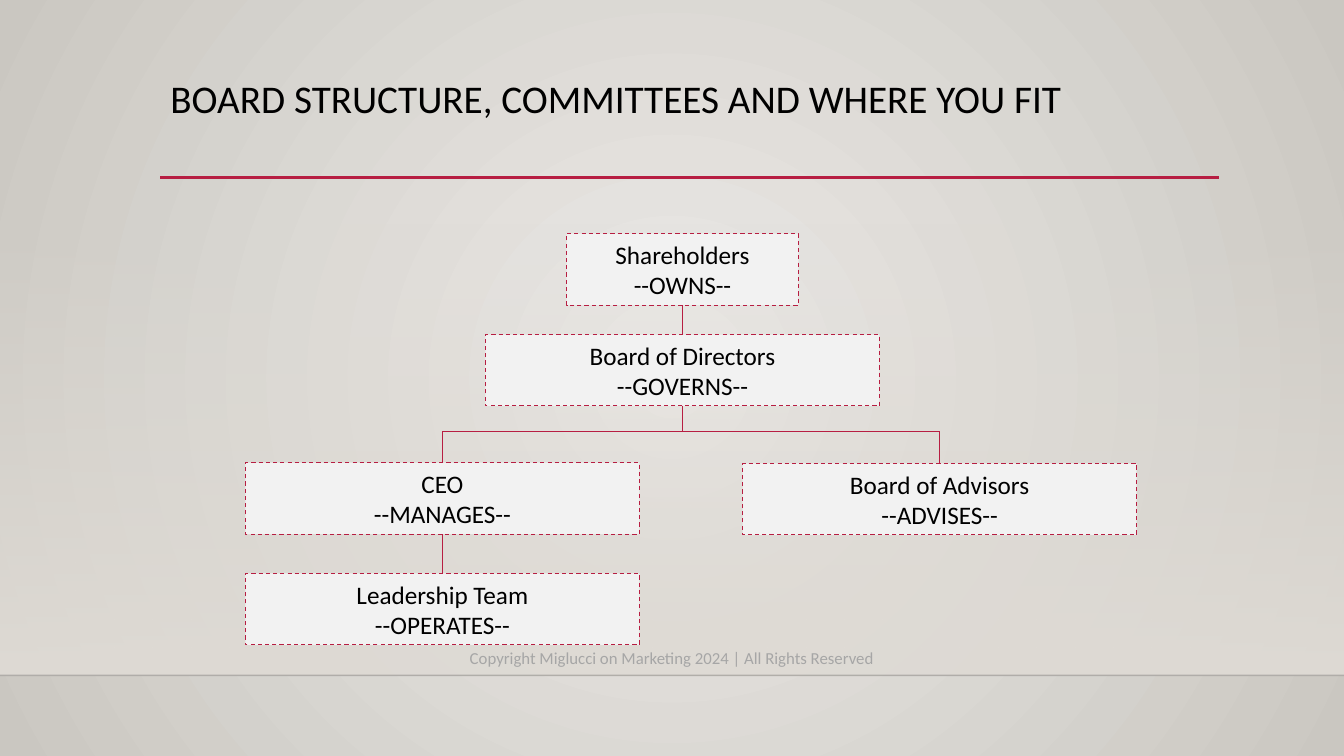
from dataclasses import dataclass

from pptx import Presentation
from pptx.dml.color import RGBColor
from pptx.enum.dml import MSO_LINE
from pptx.enum.shapes import MSO_CONNECTOR, MSO_SHAPE
from pptx.enum.text import MSO_ANCHOR, MSO_AUTO_SIZE, PP_ALIGN
from pptx.oxml import parse_xml
from pptx.oxml.ns import nsdecls, qn
from pptx.util import Cm, Pt

FONT = "Calibri"
CRIMSON = "B71E42"
SLIDE_W, SLIDE_H = 33.87, 19.05
BOX_H = 1.8
BUS_Y = 10.87
TOP, BOTTOM = 0, 2


@dataclass
class Role:
    name: str
    duty: str
    center: float
    top: float
    width: float = 9.93


SHAREHOLDERS = Role("Shareholders", "OWNS", 17.2, 5.89, 5.84)
DIRECTORS = Role("Board of Directors", "GOVERNS", 17.2, 8.43)
CEO = Role("CEO", "MANAGES", 11.15, 11.66)
ADVISORS = Role("Board of Advisors", "ADVISES", 23.68, 11.68)
LEADERSHIP = Role("Leadership Team", "OPERATES", 11.15, 14.45)


def rgb(value: str) -> RGBColor:
    return RGBColor.from_string(value)


def set_alpha(color_parent, percent: int) -> None:
    """Give the colour inside an element an opacity."""
    color = color_parent.find(f".//{qn('a:srgbClr')}")
    color.append(parse_xml(f'<a:alpha {nsdecls("a")} val="{percent * 1000}"/>'))


def set_gradient(fill, start: str, end: str) -> None:
    fill.gradient()
    for stop, color, position in zip(fill.gradient_stops, (start, end), (0, 1)):
        stop.color.rgb = rgb(color)
        stop.position = position


def format_text(tf, size: int, color: str, align: PP_ALIGN) -> None:
    for p in tf.paragraphs:
        p.alignment = align
        for r in p.runs:
            r.font.name = FONT
            r.font.size = Pt(size)
            r.font.color.rgb = rgb(color)


def add_line(slide, x1: float, y1: float, x2: float, y2: float,
             color: str = CRIMSON, width: float = 0.75):
    line = slide.shapes.add_connector(
        MSO_CONNECTOR.STRAIGHT, Cm(x1), Cm(y1), Cm(x2), Cm(y2))
    line.line.color.rgb = rgb(color)
    line.line.width = Pt(width)
    line._element.spPr.append(parse_xml(f'<a:effectLst {nsdecls("a")}/>'))
    return line


def add_role(slide, role: Role):
    sp = slide.shapes.add_shape(
        MSO_SHAPE.RECTANGLE, Cm(role.center - role.width / 2), Cm(role.top),
        Cm(role.width), Cm(BOX_H))
    sp.shadow.inherit = False
    sp.fill.solid()
    sp.fill.fore_color.rgb = rgb("F2F2F2")
    sp.line.color.rgb = rgb(CRIMSON)
    sp.line.width = Pt(0.75)
    sp.line.dash_style = MSO_LINE.DASH
    tf = sp.text_frame
    tf.word_wrap = True
    tf.auto_size = MSO_AUTO_SIZE.SHAPE_TO_FIT_TEXT
    tf.text = f"{role.name}\n--{role.duty}--"
    format_text(tf, 18, "000000", PP_ALIGN.CENTER)
    return sp


def link(slide, upper: Role, lower: Role, boxes: dict) -> None:
    line = add_line(slide, upper.center, upper.top + BOX_H,
                    lower.center, lower.top)
    line.begin_connect(boxes[upper.name], BOTTOM)
    line.end_connect(boxes[lower.name], TOP)


def add_backdrop(slide) -> None:
    # Radial background
    fill = slide.background.fill
    set_gradient(fill, "ECEAE7", "CAC7C1")
    lin = slide._element.find(f".//{qn('a:lin')}")
    lin.getparent().replace(lin, parse_xml(
        f'<a:path {nsdecls("a")} path="circle">'
        '<a:fillToRect l="50000" t="50000" r="50000" b="50000"/></a:path>'))

    # Band that fades in downwards, and the floor line below it
    band = slide.shapes.add_shape(
        MSO_SHAPE.RECTANGLE, 0, Cm(5.61), Cm(SLIDE_W), Cm(11.41))
    band.shadow.inherit = False
    band.line.fill.background()
    set_gradient(band.fill, "DFDBD5", "DFDBD5")
    band.fill.gradient_angle = 270
    set_alpha(band._element.spPr, 0)
    floor = add_line(slide, 0, 17.02, SLIDE_W, 17.02, "000001", 1)
    set_alpha(floor._element.spPr, 20)

    # Copyright line
    tf = slide.shapes.add_textbox(
        0, Cm(16.15), Cm(SLIDE_W), Cm(0.86)).text_frame
    tf.word_wrap = True
    tf.vertical_anchor = MSO_ANCHOR.MIDDLE
    tf.text = "Copyright Miglucci on Marketing 2024 | All Rights Reserved"
    format_text(tf, 12, "A6A6A6", PP_ALIGN.CENTER)


def add_title(slide) -> None:
    add_line(slide, 4.04, 4.47, 30.73, 4.47, CRIMSON, 2.5)
    title = slide.shapes.title
    title.left, title.top = Cm(4.04), Cm(1.88)
    title.width, title.height = Cm(26.67), Cm(5.16)
    tf = title.text_frame
    tf.word_wrap = True
    tf.auto_size = MSO_AUTO_SIZE.NONE
    tf.vertical_anchor = MSO_ANCHOR.TOP
    tf.text = "BOARD STRUCTURE, COMMITTEES AND WHERE YOU FIT"
    tf.paragraphs[0].line_spacing = 0.9
    format_text(tf, 28, "000000", PP_ALIGN.LEFT)


def add_org_chart(slide) -> None:
    roles = (SHAREHOLDERS, DIRECTORS, CEO, ADVISORS, LEADERSHIP)
    boxes = {role.name: add_role(slide, role) for role in roles}

    # Direct lines
    link(slide, SHAREHOLDERS, DIRECTORS, boxes)
    link(slide, CEO, LEADERSHIP, boxes)

    # Branch from the directors to the two roles below
    add_line(slide, CEO.center, BUS_Y, ADVISORS.center, BUS_Y)
    stem = add_line(slide, DIRECTORS.center, DIRECTORS.top + BOX_H,
                    DIRECTORS.center, BUS_Y)
    stem.begin_connect(boxes[DIRECTORS.name], BOTTOM)
    for role in (CEO, ADVISORS):
        drop = add_line(slide, role.center, BUS_Y, role.center, role.top)
        drop.end_connect(boxes[role.name], TOP)


def main() -> None:
    prs = Presentation()
    prs.slide_width, prs.slide_height = Cm(SLIDE_W), Cm(SLIDE_H)
    slide = prs.slides.add_slide(prs.slide_layouts[5])
    add_backdrop(slide)
    add_title(slide)
    add_org_chart(slide)
    prs.save("out.pptx")


if __name__ == "__main__":
    main()
